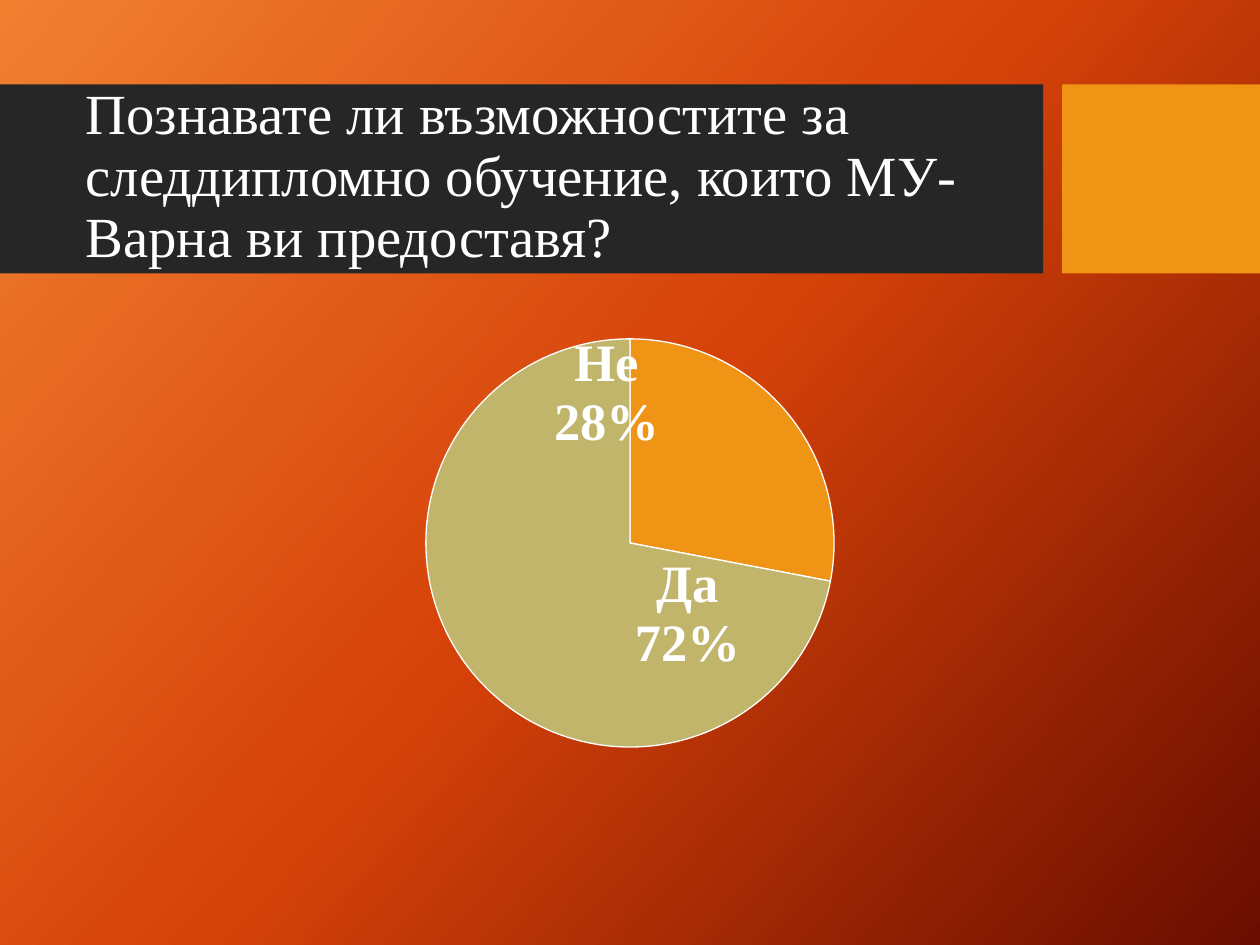
from copy import deepcopy

from lxml import etree
from pptx import Presentation
from pptx.chart.data import CategoryChartData
from pptx.dml.color import RGBColor
from pptx.enum.chart import XL_CHART_TYPE, XL_LABEL_POSITION
from pptx.enum.shapes import MSO_SHAPE
from pptx.enum.text import MSO_ANCHOR, MSO_AUTO_SIZE, PP_ALIGN
from pptx.oxml import parse_xml
from pptx.oxml.ns import nsdecls, qn
from pptx.util import Inches, Pt

PIE = XL_CHART_TYPE.PIE
CENTER = XL_LABEL_POSITION.CENTER
RECTANGLE = MSO_SHAPE.RECTANGLE
MIDDLE = MSO_ANCHOR.MIDDLE
LEFT = PP_ALIGN.LEFT
NO_AUTOFIT = MSO_AUTO_SIZE.NONE

COLORS = {
    "glow": "F18031", "flame": "D54209", "ember": "6A0D00",
    "band": "262626", "orange": "F09415", "olive": "C1B56B", "white": "FFFFFF",
}
SERIF = "Times New Roman"


def color(name):
    return RGBColor.from_string(COLORS[name])


def manual_layout(**values):
    """Chart layout element; values are fractions of the chart size."""
    parts = "".join(f'<c:{key} val="{value}"/>' for key, value in values.items())
    return parse_xml(f'<c:layout {nsdecls("c")}><c:manualLayout>{parts}'
                     '</c:manualLayout></c:layout>')


deck = Presentation()
deck.slide_width, deck.slide_height = Inches(10), Inches(7.5)
page = deck.slides.add_slide(deck.slide_layouts[5])

# Background gradient with three stops
fill = page.background.fill
fill.gradient()
fill.gradient_angle = 318
last_stop = page.background._cSld.findall(".//" + qn("a:gs"))[-1]
last_stop.addnext(deepcopy(last_stop))
for stop, name, position in zip(fill.gradient_stops, ("glow", "flame", "ember"), (0, 0.5, 1)):
    stop.color.rgb = color(name)
    stop.position = position

# Title band and accent block, behind the title
for index, (left, width, name) in enumerate([(0, 8.28, "band"), (8.43, 1.57, "orange")]):
    block = page.shapes.add_shape(RECTANGLE, Inches(left), Inches(0.67),
                                  Inches(width), Inches(1.5))
    block.shadow.inherit = False
    block.fill.solid()
    block.fill.fore_color.rgb = color(name)
    block.line.fill.background()
    page.shapes._spTree.insert(2 + index, block._element)

# Title
title = page.shapes.title
title.left, title.top = Inches(0.58), Inches(0.82)
title.width, title.height = Inches(7.54), Inches(1.18)
frame = title.text_frame
frame.word_wrap = True
frame.auto_size = NO_AUTOFIT
frame.vertical_anchor = MIDDLE
para = frame.paragraphs[0]
para.alignment = LEFT
para.line_spacing = 0.9
para.space_before = Pt(0)
span = para.add_run()
span.text = "Познавате ли възможностите за следдипломно обучение, които МУ-Варна ви предоставя?"
span.font.name = SERIF
span.font.size = Pt(32.4)
span.font.color.rgb = color("white")

# Pie chart
data = CategoryChartData(number_format="General")
data.categories = ["Не", "Да"]
data.add_series("Series 1", (28, 72))
chart = page.shapes.add_chart(PIE, Inches(0.5), Inches(1.92),
                              Inches(9), Inches(4.78), data).chart
chart.has_title = False
chart.has_legend = False
chart.font.name = "Cabin"
chart.font.size = Pt(18)
chart.font.color.rgb = color("white")

plot_area = chart._chartSpace.chart.plotArea
for old_layout in plot_area.findall(qn("c:layout")):
    plot_area.remove(old_layout)
plot_area.insert(0, manual_layout(layoutTarget="inner", xMode="edge", yMode="edge",
                                  x=0.32, y=0.15, w=0.36, h=0.7))

# Slices and their shifted labels
series = chart.plots[0].series[0]
slices = [("orange", -0.09, -0.14), ("olive", 0.12, 0.01)]
for index, (name, shift_x, shift_y) in enumerate(slices):
    point = series.points[index]
    point.format.fill.solid()
    point.format.fill.fore_color.rgb = color(name)
    point.format.line.color.rgb = color("white")
    point.format.line.width = Pt(0.75)

    label = point.data_label
    label.position = CENTER
    label.font.name = SERIF
    label.font.size = Pt(30)
    label.font.bold = True
    label.font.color.rgb = color("white")
    node = series._element.findall(".//" + qn("c:dLbl"))[index]
    node.find(qn("c:idx")).addnext(manual_layout(x=shift_x, y=shift_y))
    for tag, shown in (("c:showVal", "0"), ("c:showCatName", "1"), ("c:showPercent", "1")):
        node.find(qn(tag)).set("val", shown)
    etree.SubElement(node, qn("c:separator")).text = "\n"

# Label defaults for the series
labels = series.data_labels
labels.show_value = False
labels.show_category_name = True
labels.show_percentage = True
labels.number_format = "0%"
labels.number_format_is_linked = False
labels.font.name = SERIF
labels.font.size = Pt(30)
labels.font.bold = True
labels.font.color.rgb = color("white")
for leader in series._element.iter(qn("c:showLeaderLines")):
    leader.set("val", "0")

deck.save("out.pptx")
